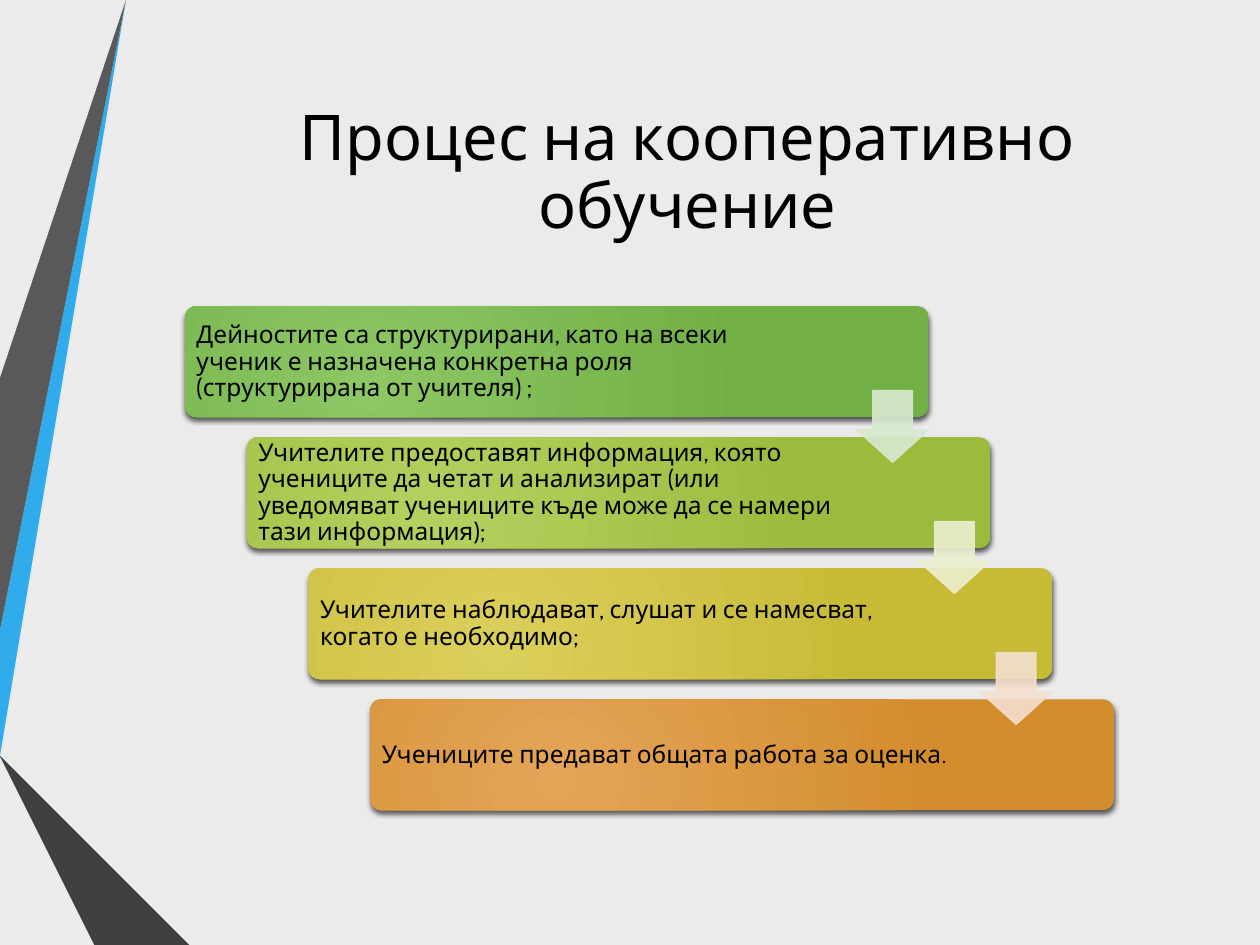
from lxml.etree import SubElement as Sub
from pptx import Presentation
from pptx.dml.color import RGBColor
from pptx.enum.shapes import MSO_SHAPE as Shape
from pptx.enum.text import MSO_ANCHOR as Anchor, MSO_AUTO_SIZE as Auto, PP_ALIGN as Align
from pptx.oxml.ns import qn
from pptx.util import Inches, Pt


def rgb(code):
    return RGBColor.from_string(code)


def write(box, text, size, align, frame_set):
    frame = box.text_frame
    for key, value in frame_set.items():
        setattr(frame, key, value)
    frame.text = text
    par = frame.paragraphs[0]
    par.alignment, par.line_spacing = align, 0.9
    font = par.runs[0].font
    for key, value in {"name": "Cabin", "size": Pt(size)}.items():
        setattr(font, key, value)
    font.color.rgb = rgb("000000")


deck = Presentation()
deck.slide_width, deck.slide_height = Inches(10), Inches(7.5)
slide = deck.slides.add_slide(deck.slide_layouts[5])
slide.background.fill.solid()
slide.background.fill.fore_color.rgb = rgb("EBEBEB")

# Ribbons along the left edge
ribbons = [
    ("30ACEC", [(0, 5.44), (0, 5.75), (0.22, 5.79), (1.17, 0), (0.89, 0)]),
    ("595959", [(0.83, 0), (0.55, 0), (0, 3.36), (0, 5.06)]),
    ("262626", [(0, 6.19), (0, 6.21), (0.93, 7.5), (0.99, 7.5)]),
    ("0C5A82", [(0, 5.79), (0, 5.8), (1.56, 7.5), (1.63, 7.5)]),
    ("1287C3", [(0, 5.79), (1.63, 7.5), (2.33, 7.5), (0.22, 5.79), (0, 5.75)]),
    ("404040", [(0, 6.19), (0.99, 7.5), (1.51, 7.5), (0, 5.86)]),
]
for color, points in ribbons:
    pen = slide.shapes.build_freeform(*points[0], scale=Inches(1))
    pen.add_line_segments(points[1:], close=True)
    band = pen.convert_to_shape()
    band.fill.solid()
    band.fill.fore_color.rgb = rgb(color)
    band.line.fill.background()
    band.shadow.inherit = False

# Title
title = slide.shapes.title
place = {"left": 1.47, "top": 0.68, "width": 7.97, "height": 1.4}
for key, value in place.items():
    setattr(title, key, Inches(value))
write(title, "Процес на кооперативно обучение", 36, Align.CENTER,
      {"word_wrap": True, "auto_size": Auto.NONE, "vertical_anchor": Anchor.MIDDLE})

# Cards of the staircase, each with its text
steps = [
    ("8CC764", "72AF45", 4.87, "Дейностите са структурирани, като на всеки ученик е "
     "назначена конкретна роля (структурирана от учителя) ;"),
    ("B4D160", "9CBB3D", 4.78, "Учителите предоставят информация, която учениците да четат "
     "и анализират (или уведомяват учениците къде може да се намери тази информация);"),
    ("DBCF5C", "C7BA35", 4.78, "Учителите наблюдават, слушат и се намесват, "
     "когато е необходимо;"),
    ("E4A559", "D38D2D", 4.78, "Учениците предават общата работа за оценка."),
]
left, top, right, down = 1.47, 2.43, 0.49, 1.04
pad = Inches(0.06)
body = {"word_wrap": True, "auto_size": Auto.NONE, "vertical_anchor": Anchor.MIDDLE,
        "margin_left": pad, "margin_right": pad, "margin_top": pad, "margin_bottom": pad}
for i, (light, dark, width, text) in enumerate(steps):
    x, y = left + i * right, top + i * down
    card = slide.shapes.add_shape(Shape.ROUNDED_RECTANGLE, Inches(x), Inches(y),
                                  Inches(5.9), Inches(0.88))
    card.adjustments[0] = 0.1
    card.line.fill.background()

    # Round gradient
    card.fill.gradient()
    for stop, color in zip(card.fill.gradient_stops, (light, dark)):
        stop.color.rgb = rgb(color)
    props = card._element.spPr
    grad = props.find(qn("a:gradFill"))
    grad.remove(grad.find(qn("a:lin")))
    ring = Sub(grad, qn("a:path"), {"path": "circle"})
    Sub(ring, qn("a:fillToRect"), {"l": "50000", "t": "100000", "r": "100000", "b": "50000"})

    # Soft shadow below
    card.shadow.inherit = False
    shade = Sub(props.find(qn("a:effectLst")), qn("a:outerShdw"),
                {"blurRad": str(Pt(3)), "dist": str(Pt(2)), "dir": "5400000",
                 "algn": "ctr", "rotWithShape": "0"})
    black = Sub(shade, qn("a:srgbClr"), {"val": "000000"})
    Sub(black, qn("a:alpha"), {"val": "64000"})

    label = slide.shapes.add_textbox(Inches(x + 0.03), Inches(y + 0.03),
                                     Inches(width), Inches(0.83))
    write(label, text, 14, Align.LEFT, body)
    label.text_frame.paragraphs[0].space_after = Pt(5)

# Arrows from card to card
for i, color in enumerate(("D8E9D0", "EDEFCF", "F4DFCE")):
    arrow = slide.shapes.add_shape(Shape.DOWN_ARROW, Inches(6.8 + i * right),
                                   Inches(3.1 + i * down), Inches(0.57), Inches(0.57))
    arrow.adjustments[0], arrow.adjustments[1] = 0.55, 0.45
    arrow.shadow.inherit = False
    arrow.line.width = Pt(0.75)
    for paint in (arrow.fill, arrow.line.fill):
        paint.solid()
        paint.fore_color.rgb = rgb(color)
    for tint in arrow._element.spPr.iter(qn("a:srgbClr")):
        Sub(tint, qn("a:alpha"), {"val": "90000"})

deck.save("out.pptx")
